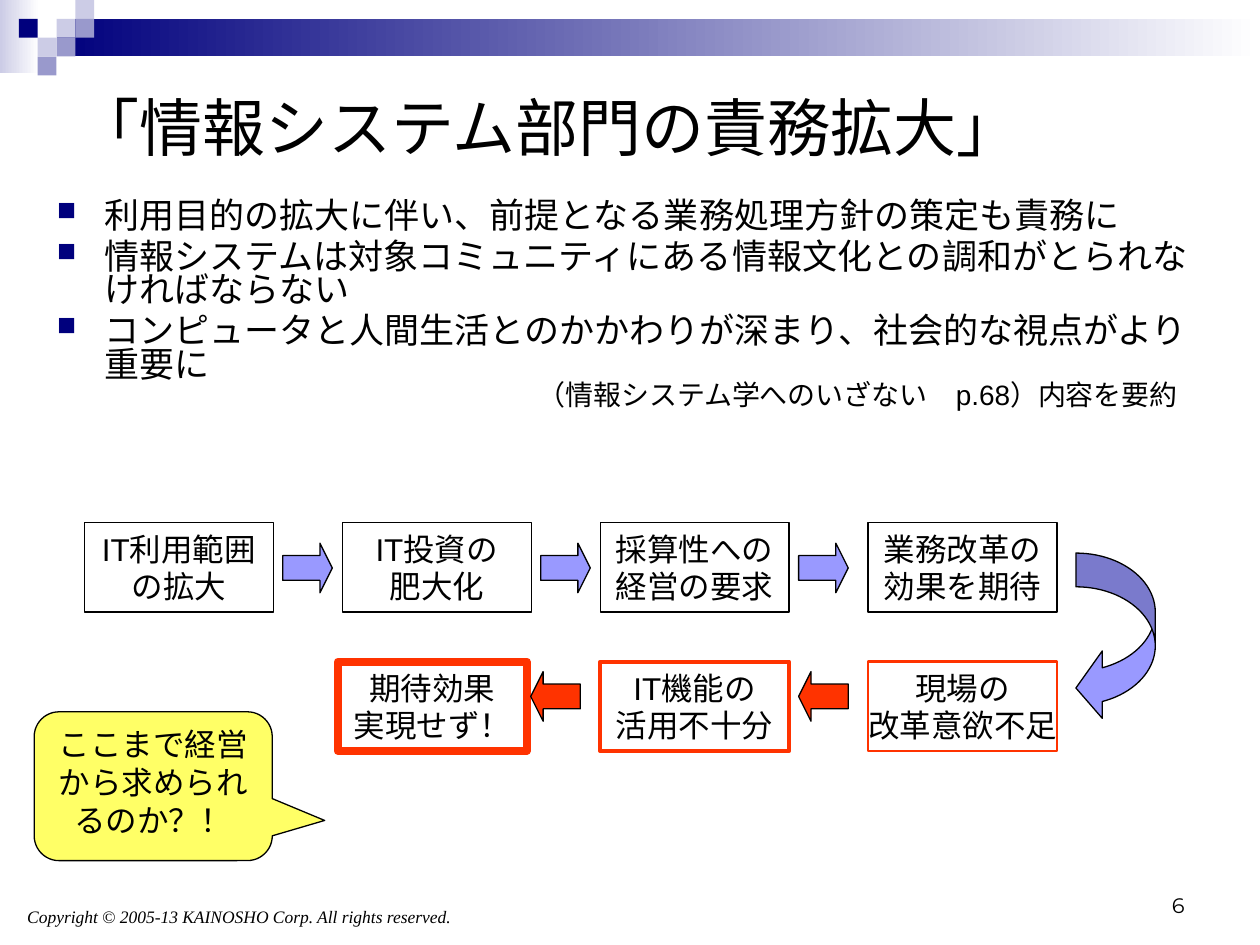
from lxml import etree
from pptx import Presentation
from pptx.dml.color import RGBColor
from pptx.enum.shapes import MSO_SHAPE
from pptx.enum.text import MSO_ANCHOR, PP_ALIGN
from pptx.oxml.ns import qn
from pptx.util import Cm, Pt

RECTANGLE = MSO_SHAPE.RECTANGLE
RIGHT_ARROW = MSO_SHAPE.RIGHT_ARROW
LEFT_ARROW = MSO_SHAPE.LEFT_ARROW
CURVED_ARROW = MSO_SHAPE.CURVED_LEFT_ARROW
CALLOUT = MSO_SHAPE.ROUNDED_RECTANGULAR_CALLOUT
TOP, MIDDLE, BOTTOM = MSO_ANCHOR.TOP, MSO_ANCHOR.MIDDLE, MSO_ANCHOR.BOTTOM
LEFT, CENTER, RIGHT = PP_ALIGN.LEFT, PP_ALIGN.CENTER, PP_ALIGN.RIGHT

NAVY, LAVENDER, LILAC, WHITE = "00007D", "CCCCE6", "9999CC", "FFFFFF"
BLACK, RED, BLUE, YELLOW = "000000", "FF3300", "9999FF", "FFFF66"


def add_shape(kind, place, fills, line=None, line_width=0.75):
    """Add a shape at place (cm); two fill colours make a left-to-right gradient."""
    shape = slide.shapes.add_shape(kind, *map(Cm, place))
    shape.shadow.inherit = False
    if len(fills) == 2:
        shape.fill.gradient()
        shape.fill.gradient_angle = 0
        for stop, color in zip(shape.fill.gradient_stops, fills):
            stop.color.rgb = RGBColor.from_string(color)
    else:
        shape.fill.solid()
        shape.fill.fore_color.rgb = RGBColor.from_string(fills[0])
    if line:
        shape.line.color.rgb = RGBColor.from_string(line)
        shape.line.width = Pt(line_width)
    else:
        shape.line.fill.background()
    return shape


def write_text(shape, lines, size, align=LEFT, anchor=TOP, wrap=True, font="Arial"):
    frame = shape.text_frame
    frame.word_wrap = wrap
    frame.vertical_anchor = anchor
    frame.text = "\n".join(lines)
    for paragraph in frame.paragraphs:
        paragraph.alignment = align
        paragraph.font.size = Pt(size)
        paragraph.font.name = font
        paragraph.font.color.rgb = RGBColor.from_string(BLACK)
    return frame.paragraphs


presentation = Presentation()
presentation.slide_width, presentation.slide_height = Cm(25.4), Cm(19.05)
slide = presentation.slides.add_slide(presentation.slide_layouts[6])

# Header band with its mosaic of square tiles
TILE = 0.38
add_shape(RECTANGLE, (0, 0, 0.79, 1.47), (LAVENDER, WHITE))
add_shape(RECTANGLE, (3 * TILE, TILE, 24.26, 2 * TILE), (NAVY, WHITE))
tiles = [(3, 1, LAVENDER), (4, 0, LAVENDER), (4, 1, LILAC), (2, 2, LAVENDER),
         (1, 1, NAVY), (3, 2, LILAC), (2, 3, LILAC)]
for column, row, color in tiles:
    add_shape(RECTANGLE, (column * TILE, row * TILE, TILE, TILE), (color,))

# Footer
copyright_box = slide.shapes.add_textbox(Cm(0.3), Cm(18.14), Cm(10), Cm(0.68))
copyright_line = write_text(
    copyright_box, ["Copyright © 2005-13 KAINOSHO Corp. All rights reserved."],
    10, anchor=MIDDLE, font="Times New Roman")[0]
copyright_line.font.italic = True
number_box = slide.shapes.add_textbox(Cm(18.2), Cm(17.35), Cm(5.93), Cm(1.27))
write_text(number_box, ["6"], 12, RIGHT, BOTTOM, font="Montserrat")

# Title and bullets
title_box = slide.shapes.add_textbox(Cm(1.3), Cm(1.32), Cm(22.86), Cm(2.46))
write_text(title_box, ["「情報システム部門の責務拡大」"], 36, anchor=MIDDLE)

body_box = slide.shapes.add_textbox(Cm(0.9), Cm(3.94), Cm(23.7), Cm(3.81))
bullets = write_text(body_box, [
    "利用目的の拡大に伴い、前提となる業務処理方針の策定も責務に",
    "情報システムは対象コミュニティにある情報文化との調和がとられなければならない",
    "コンピュータと人間生活とのかかわりが深まり、社会的な視点がより重要に",
], 20)
for index, paragraph in enumerate(bullets):
    paragraph.line_spacing = 0.8
    paragraph.space_before = Pt(4 if index else 0)
    properties = paragraph._p.get_or_add_pPr()
    properties.set("marL", str(Cm(0.95)))
    properties.set("indent", str(Cm(-0.95)))
    bullet_color = etree.Element(qn("a:buClr"))
    etree.SubElement(bullet_color, qn("a:srgbClr"), val=NAVY)
    bullet_parts = [bullet_color,
                    etree.Element(qn("a:buSzPct"), val="75000"),
                    etree.Element(qn("a:buChar"), char="■")]
    run_defaults = properties.find(qn("a:defRPr"))
    for part in bullet_parts:
        run_defaults.addprevious(part)

# Flow boxes: causes above, consequences below
BOX_WIDTH, BOX_HEIGHT = 3.81, 1.8
UPPER, LOWER = 10.54, 13.34
boxes = [
    (1.7, UPPER, BLACK, 0.75, ["IT利用範囲", "の拡大"]),
    (6.9, UPPER, BLACK, 0.75, ["IT投資の", "肥大化"]),
    (12.1, UPPER, BLACK, 0.75, ["採算性への", "経営の要求"]),
    (17.5, UPPER, BLACK, 0.75, ["業務改革の", "効果を期待"]),
    (17.5, LOWER, RED, 1.5, ["現場の", "改革意欲不足"]),
    (12.1, LOWER, RED, 2.25, ["IT機能の", "活用不十分"]),
    (6.81, LOWER, RED, 4.5, ["期待効果", "実現せず！"]),
]
for left, top, line, line_width, lines in boxes:
    box = add_shape(RECTANGLE, (left, top, BOX_WIDTH, BOX_HEIGHT), (WHITE,), line, line_width)
    write_text(box, lines, 18, CENTER, MIDDLE, wrap=False)

# Arrows between the boxes
turn = add_shape(CURVED_ARROW, (21.69, 11.15, 1.6, 3.4), (BLUE,), BLACK)
turn.adjustments[0], turn.adjustments[1], turn.adjustments[2] = 0.425, 0.85, 0.333
for left in (5.7, 10.9, 16.1):
    arrow = add_shape(RIGHT_ARROW, (left, 10.95, 1, 1), (BLUE,), BLACK)
    arrow.adjustments[1] = 0.25
for left in (16.1, 10.7):
    arrow = add_shape(LEFT_ARROW, (left, 13.54, 1, 1), (RED,), BLACK)
    arrow.adjustments[1] = 0.25

# Comment and source
callout = add_shape(CALLOUT, (0.69, 14.35, 4.8, 3), (YELLOW,), BLACK)
callout.adjustments[0], callout.adjustments[1] = 0.72, 0.23
write_text(callout, ["ここまで経営から求められるのか？！"], 18, CENTER)

source_box = slide.shapes.add_textbox(Cm(9.32), Cm(7.49), Cm(15.54), Cm(0.94))
source = write_text(source_box, ["（情報システム学へのいざない　p.68）内容を要約"], 16)[0]
source._p.get_or_add_pPr().set("marL", str(Cm(1.27)))

presentation.save("out.pptx")
